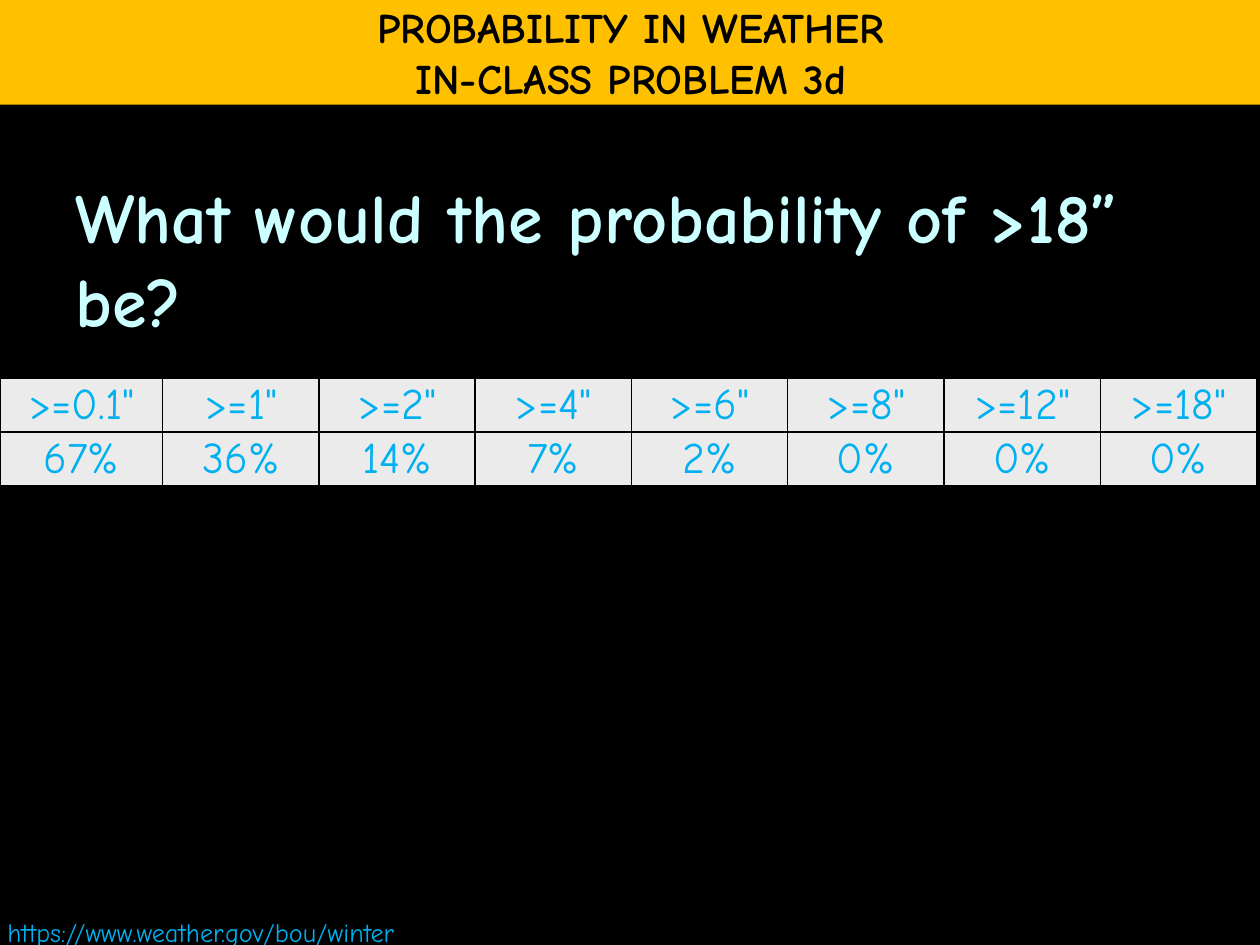
from dataclasses import dataclass

import pptx
import pptx.dml.color
import pptx.enum.text
import pptx.oxml
import pptx.oxml.ns
import pptx.util
from pptx.util import Cm

FONT = "Comic Neue"
SKY = "00B0F0"
ALIGN = pptx.enum.text.PP_ALIGN
ANCHOR = pptx.enum.text.MSO_ANCHOR


@dataclass
class Style:
    size: int
    color: str
    bold: bool = False
    align: ALIGN = ALIGN.LEFT


@dataclass
class Snowfall:
    threshold: str
    chance: str


HEADING = Style(24, "000000", True, ALIGN.CENTER)
QUESTION = Style(40, "CCFFFF", True)
SOURCE = Style(15, SKY)
CELL = Style(25, SKY, False, ALIGN.CENTER)

FORECAST = [
    Snowfall('>=0.1"', "67%"),
    Snowfall('>=1"', "36%"),
    Snowfall('>=2"', "14%"),
    Snowfall('>=4"', "7%"),
    Snowfall('>=6"', "2%"),
    Snowfall('>=8"', "0%"),
    Snowfall('>=12"', "0%"),
    Snowfall('>=18"', "0%"),
]


def rgb(color: str) -> pptx.dml.color.RGBColor:
    return pptx.dml.color.RGBColor.from_string(color)


def paint(fill, color: str) -> None:
    fill.solid()
    fill.fore_color.rgb = rgb(color)


def place(sp, left: float, top: float, width: float, height: float) -> None:
    sp.left, sp.top, sp.width, sp.height = Cm(left), Cm(top), Cm(width), Cm(height)


def write(tf, text: str, style: Style) -> None:
    tf.text = text
    for p in tf.paragraphs:
        p.alignment = style.align
        p.font.name = FONT
        p.font.size = pptx.util.Pt(style.size)
        p.font.bold = style.bold
        p.font.color.rgb = rgb(style.color)


def add_borders(cell, color: str) -> None:
    props = cell._tc.get_or_add_tcPr()
    for side in ("lnL", "lnR", "lnT", "lnB"):
        props.append(pptx.oxml.parse_xml(
            f'<a:{side} {pptx.oxml.ns.nsdecls("a")} w="12700"><a:solidFill>'
            f'<a:srgbClr val="{color}"/></a:solidFill></a:{side}>'
        ))


def add_title(s) -> None:
    sp = s.shapes.title
    place(sp, 0, 0, 25.43, 2.11)
    paint(sp.fill, "FFC000")
    tf = sp.text_frame
    tf.auto_size = pptx.enum.text.MSO_AUTO_SIZE.NONE
    tf.vertical_anchor = ANCHOR.MIDDLE
    tf.word_wrap = False
    write(tf, "PROBABILITY IN WEATHER\nIN-CLASS PROBLEM 3d", HEADING)


def add_question(s) -> None:
    sp = s.placeholders[1]
    place(sp, 1.27, 3.38, 22.86, 15.67)
    tf = sp.text_frame
    tf.auto_size = pptx.enum.text.MSO_AUTO_SIZE.NONE
    write(tf, "What would the probability of >18” be?", QUESTION)
    props = tf.paragraphs[0]._p.get_or_add_pPr()
    props.set("marL", "0")
    props.set("indent", "0")
    props.insert_element_before(
        pptx.oxml.parse_xml(f'<a:buNone {pptx.oxml.ns.nsdecls("a")}/>'),
        "a:tabLst", "a:defRPr", "a:extLst",
    )


def add_source(s) -> None:
    sp = s.shapes.add_textbox(Cm(-0.1), Cm(18.34), Cm(12.73), Cm(0.89))
    sp.text_frame.word_wrap = True
    write(sp.text_frame, "https://www.weather.gov/bou/winter", SOURCE)


def add_forecast(s, forecast: list[Snowfall]) -> None:
    frame = s.shapes.add_table(2, len(forecast), Cm(0), Cm(7.62), Cm(25.4), Cm(2.16))
    table = frame.table
    table.first_row = table.horz_banding = False
    for i, column in enumerate(table.columns):
        column.width = Cm(3.15) if i else Cm(3.28)
    for i, snowfall in enumerate(forecast):
        for row, text in enumerate((snowfall.threshold, snowfall.chance)):
            cell = table.cell(row, i)
            cell.margin_left = cell.margin_right = cell.margin_top = Cm(0.03)
            cell.margin_bottom = Cm(0)
            cell.vertical_anchor = ANCHOR.MIDDLE
            add_borders(cell, "000000")
            paint(cell.fill, "EBEBEB")
            write(cell.text_frame, text, CELL)


def main() -> None:
    prs = pptx.Presentation()
    prs.slide_width, prs.slide_height = Cm(25.4), Cm(19.05)
    s = prs.slides.add_slide(prs.slide_layouts[1])
    paint(s.background.fill, "000000")
    add_question(s)
    add_source(s)
    add_forecast(s, FORECAST)
    add_title(s)
    prs.save("out.pptx")


if __name__ == "__main__":
    main()
